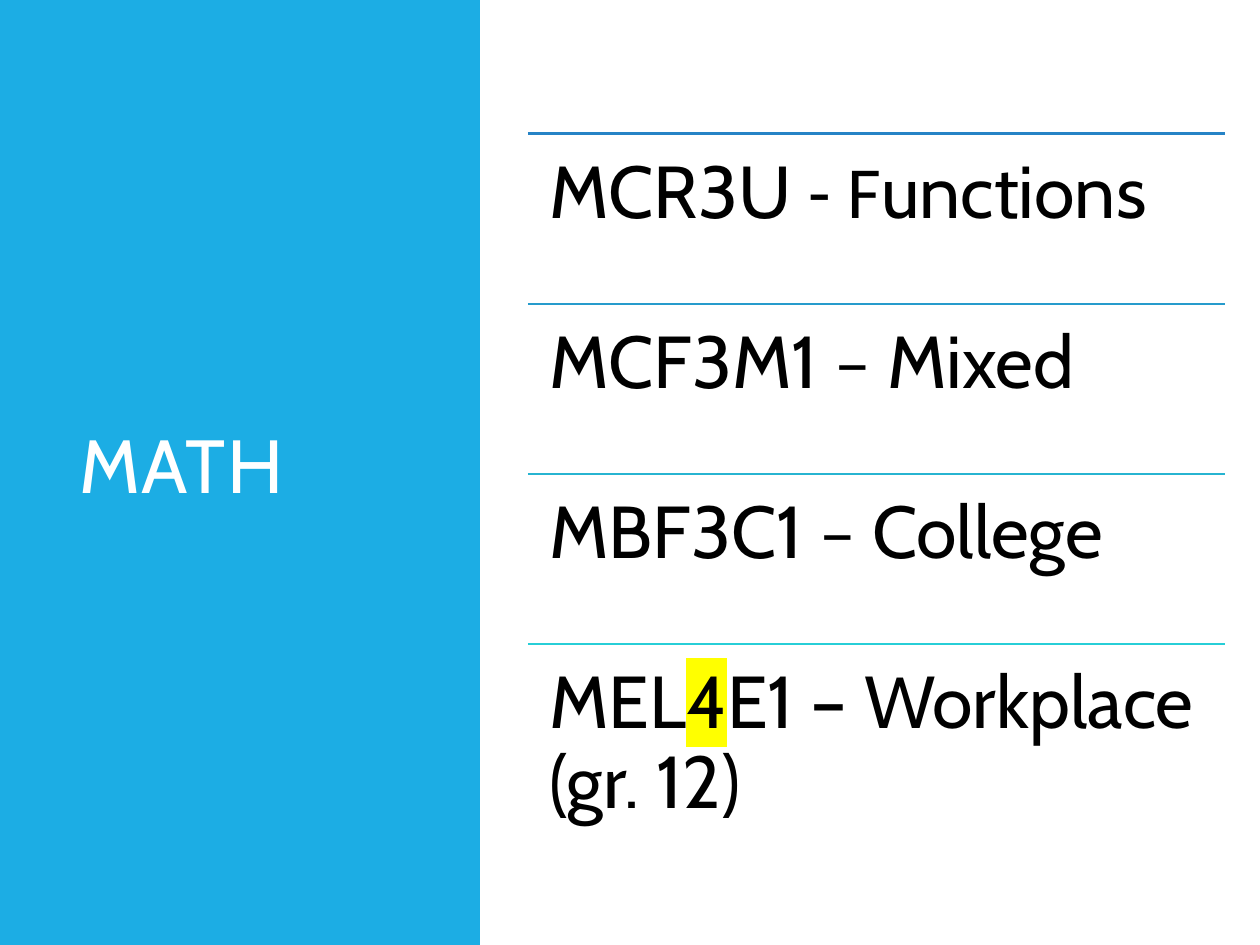
from dataclasses import dataclass
from typing import Optional

from lxml.etree import SubElement
from pptx import Presentation
from pptx.dml.color import RGBColor
from pptx.enum.shapes import MSO_CONNECTOR, MSO_SHAPE
from pptx.enum.text import MSO_ANCHOR
from pptx.oxml import parse_xml
from pptx.oxml.ns import nsdecls, qn
from pptx.slide import Slide
from pptx.util import Inches, Pt


@dataclass(frozen=True)
class Theme:
    panel: str = "1CADE4"
    title: str = "FFFFFF"
    text: str = "000000"
    highlight: str = "FFFF00"
    font: str = "Cabin"
    alt_font: str = "Calibri"
    title_size: float = 43
    course_size: float = 42
    rule_width: float = 1.25


THEME = Theme()


@dataclass(frozen=True)
class Span:
    text: str
    font: str = THEME.font
    highlight: Optional[str] = None


@dataclass(frozen=True)
class Course:
    rule_color: str
    spans: tuple[Span, ...]


COURSES = (
    Course("2683C6", (Span("MCR3U"), Span(" - F", THEME.alt_font), Span("unctions"))),
    Course("269BCC", (Span("MCF3M1"), Span(" – ", THEME.alt_font), Span("Mixed"))),
    Course("27B4D1", (Span("MBF3C1"), Span(" – ", THEME.alt_font), Span("College"))),
    Course("27CED7", (Span("MEL"), Span("4", highlight=THEME.highlight),
                      Span("E1 – Workplace (gr. 12)"))),
)
LIST_LEFT, LIST_TOP, LIST_WIDTH, ROW_HEIGHT = 4.19, 1.06, 5.53, 1.35


def add_text(s: Slide, spans: tuple[Span, ...], left: float, top: float,
             width: float, height: float, *, size: float, color: str,
             line_spacing: float, anchor: MSO_ANCHOR = MSO_ANCHOR.TOP,
             inset: Optional[float] = None, space_after: float = 0,
             tracking: float = 0) -> None:
    """Add a one-paragraph text box; size, space_after and tracking are in points."""
    tf = s.shapes.add_textbox(Inches(left), Inches(top), Inches(width), Inches(height)).text_frame
    tf.word_wrap = True
    tf.vertical_anchor = anchor
    if inset is not None:
        tf.margin_left = tf.margin_right = tf.margin_top = tf.margin_bottom = Inches(inset)
    p = tf.paragraphs[0]
    p.line_spacing = line_spacing
    p.space_after = Pt(space_after)
    for span in spans:
        r = p.add_run()
        r.text = span.text
        r.font.size = Pt(size)
        r.font.color.rgb = RGBColor.from_string(color)
        r.font.name = span.font
        props = r.font._element
        if tracking:
            props.set("spc", str(round(tracking * 100)))
        if span.highlight:
            props.find(qn("a:solidFill")).addnext(parse_xml(
                f'<a:highlight {nsdecls("a")}><a:srgbClr val="{span.highlight}"/></a:highlight>'))


def add_panel(s: Slide) -> None:
    sp = s.shapes.add_shape(MSO_SHAPE.RECTANGLE, 0, 0, Inches(3.81), Inches(7.5))
    sp.shadow.inherit = False
    sp.fill.solid()
    sp.fill.fore_color.rgb = RGBColor.from_string(THEME.panel)
    sp.line.fill.background()


def add_rule(s: Slide, top: float, color: str) -> None:
    line = s.shapes.add_connector(MSO_CONNECTOR.STRAIGHT, Inches(LIST_LEFT), Inches(top),
                                  Inches(LIST_LEFT + LIST_WIDTH), Inches(top))
    line.line.color.rgb = RGBColor.from_string(color)
    line.line.width = Pt(THEME.rule_width)
    SubElement(line._element.spPr, qn("a:effectLst"))


def add_course(s: Slide, course: Course, top: float) -> None:
    add_rule(s, top, course.rule_color)
    add_text(s, course.spans, LIST_LEFT, top, LIST_WIDTH, ROW_HEIGHT,
             size=THEME.course_size, color=THEME.text, line_spacing=0.9,
             inset=0.17, space_after=0.35 * THEME.course_size)


def main() -> None:
    prs = Presentation()
    prs.slide_width, prs.slide_height = Inches(10), Inches(7.5)
    s = prs.slides.add_slide(prs.slide_layouts[6])
    add_panel(s)
    add_text(s, (Span("MATH"),), 0.53, 0.7, 2.8, 6.09, size=THEME.title_size,
             color=THEME.title, line_spacing=0.8, anchor=MSO_ANCHOR.MIDDLE, tracking=1)
    for i, course in enumerate(COURSES):
        add_course(s, course, LIST_TOP + i * ROW_HEIGHT)
    prs.save("out.pptx")


if __name__ == "__main__":
    main()
